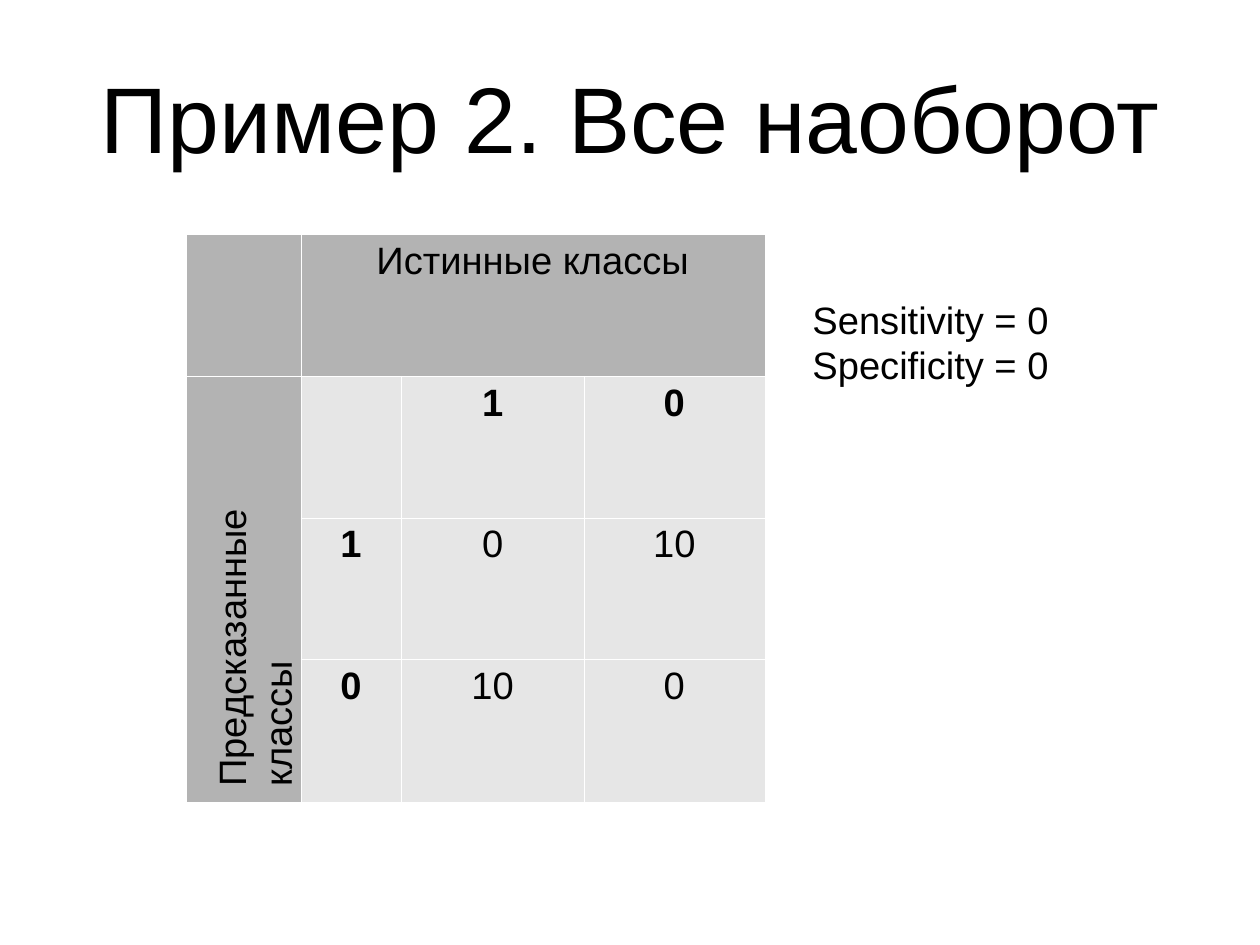
"""Build a slide with a confusion matrix of a fully inverted classifier."""
from lxml import etree
from pptx import Presentation
from pptx.dml.color import RGBColor
from pptx.enum.text import MSO_ANCHOR, PP_ALIGN
from pptx.oxml.ns import qn
from pptx.util import Cm, Inches, Pt

LEFT, CENTER = PP_ALIGN.LEFT, PP_ALIGN.CENTER
TOP, MIDDLE = MSO_ANCHOR.TOP, MSO_ANCHOR.MIDDLE

WIDTH, HEIGHT = Cm(28), Cm(21)
FONT, BODY, HEAD = "Arial", 24, 58.7
COLORS = {"text": "000000", "head": "B3B3B3", "cell": "E6E6E6", "edge": "FFFFFF"}
EDGE = 0.06
PAD = (0.1, 0.05)

TITLE = ["Пример 2. Все наоборот"]
SIDE = ["Предсказанные классы"]
SCORES = ["Sensitivity = 0", "Specificity = 0"]
GRID = [
    ["", "Истинные классы", "", ""],
    ["", "", "1", "0"],
    ["", "1", "0", "10"],
    ["", "0", "10", "0"],
]
COLS = [1, 0.88, 1.6, 1.58]
ROWS = [1.24, 1.24, 1.24, 1.25]
GRID_LEFT, GRID_TOP = 1.63, 2.05


def rgb(name):
    return RGBColor.from_string(COLORS[name])


def style(para, size, align=LEFT, bold=False):
    para.alignment = align
    font = para.font
    font.name, font.size, font.bold = FONT, Pt(size), bold
    font.color.rgb = rgb("text")


def add_text(slide, lines, box, size=BODY, align=LEFT, anchor=TOP, pad=PAD, turn=0):
    shape = slide.shapes.add_textbox(*map(Inches, box))
    shape.rotation = turn
    frame = shape.text_frame
    frame.word_wrap = True
    frame.vertical_anchor = anchor
    frame.margin_left = frame.margin_right = Inches(pad[0])
    frame.margin_top = frame.margin_bottom = Inches(pad[1])
    frame.text = "\n".join(lines)
    for para in frame.paragraphs:
        style(para, size, align)


def add_edges(cell):
    props = cell._tc.get_or_add_tcPr()
    for spot, side in enumerate(("a:lnL", "a:lnR", "a:lnT", "a:lnB")):
        line = etree.Element(qn(side), w=str(int(Pt(EDGE))))
        fill = etree.SubElement(line, qn("a:solidFill"))
        etree.SubElement(fill, qn("a:srgbClr"), val=COLORS["edge"])
        props.insert(spot, line)


def add_grid(slide):
    rows, cols = len(ROWS), len(COLS)
    box = (GRID_LEFT, GRID_TOP, sum(COLS), sum(ROWS))
    table = slide.shapes.add_table(rows, cols, *map(Inches, box)).table
    for col, wide in zip(table.columns, COLS):
        col.width = Inches(wide)
    for row, high in zip(table.rows, ROWS):
        row.height = Inches(high)
    for r, texts in enumerate(GRID):
        for c, text in enumerate(texts):
            cell = table.cell(r, c)
            cell.text = text
            cell.margin_left = cell.margin_right = Inches(PAD[0])
            cell.margin_top = cell.margin_bottom = Inches(PAD[1])
            style(cell.text_frame.paragraphs[0], BODY, CENTER, r > 0 and 1 in (r, c))
            cell.fill.solid()
            cell.fill.fore_color.rgb = rgb("cell" if r and c else "head")
            add_edges(cell)
    table.cell(0, 1).merge(table.cell(0, cols - 1))
    table.cell(1, 0).merge(table.cell(rows - 1, 0))


def main():
    deck = Presentation()
    deck.slide_width, deck.slide_height = WIDTH, HEIGHT
    slide = deck.slides.add_slide(deck.slide_layouts[6])
    edge = WIDTH.inches * 0.05
    add_text(slide, TITLE, (edge, HEIGHT.inches * 0.04, WIDTH.inches - 2 * edge, 1.38),
             HEAD, CENTER, MIDDLE, (0, 0))
    add_grid(slide)
    add_text(slide, SIDE, (0.3, 4.67, 3.78, 0.84), turn=270)
    add_text(slide, SCORES, (7.01, 2.54, 2.76, 1.25))
    deck.save("out.pptx")


if __name__ == "__main__":
    main()
